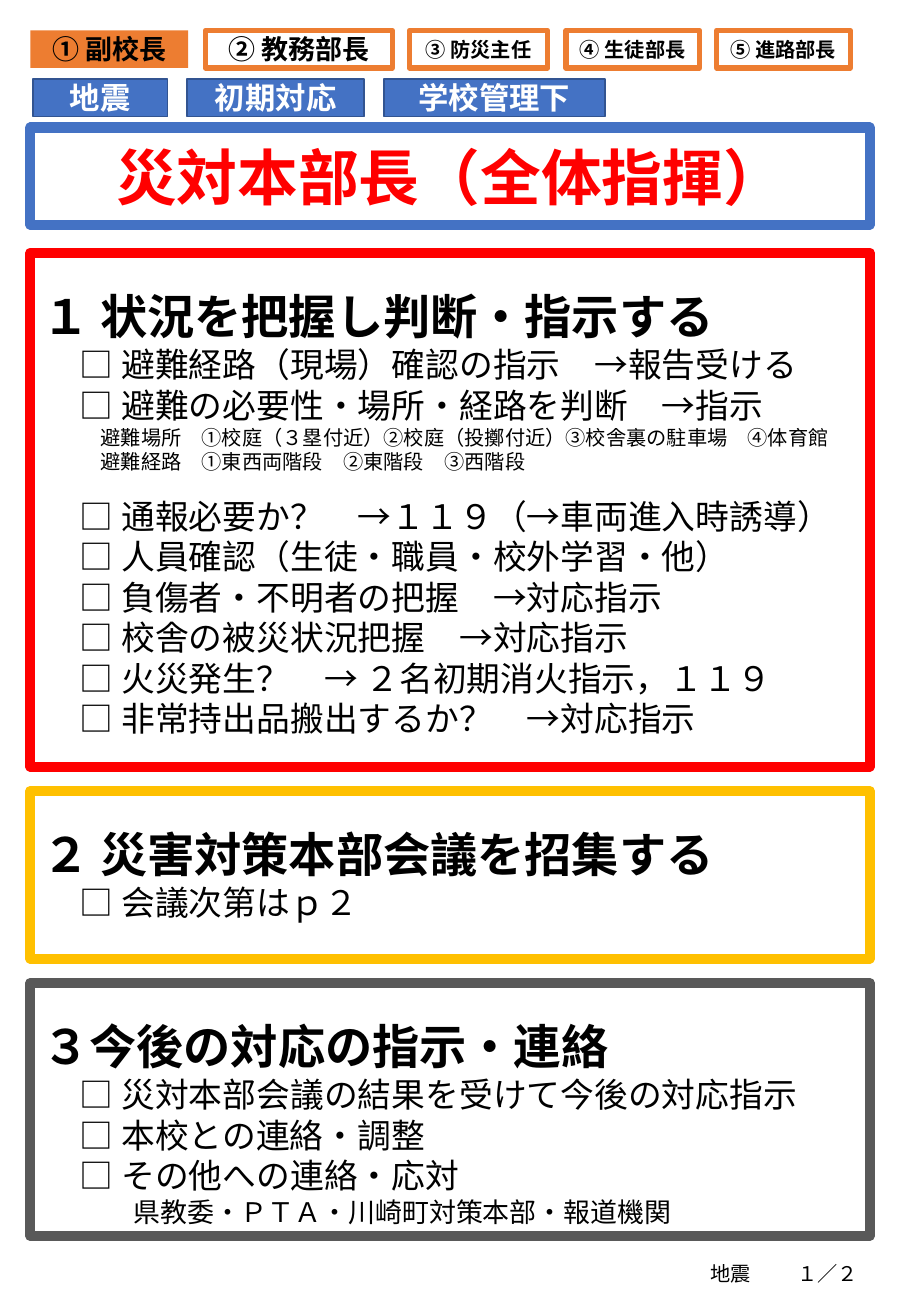
from pptx import Presentation
from pptx.dml.color import RGBColor
from pptx.enum.shapes import MSO_SHAPE
from pptx.enum.text import MSO_ANCHOR, PP_ALIGN
from pptx.util import Inches, Pt
from lxml import etree

RECTANGLE = MSO_SHAPE.RECTANGLE
TOP, MIDDLE = MSO_ANCHOR.TOP, MSO_ANCHOR.MIDDLE
LEFT, CENTER, RIGHT = PP_ALIGN.LEFT, PP_ALIGN.CENTER, PP_ALIGN.RIGHT

BLACK = RGBColor(0x00, 0x00, 0x00)
WHITE = RGBColor(0xFF, 0xFF, 0xFF)
RED = RGBColor(0xFF, 0x00, 0x00)
ORANGE = RGBColor(0xED, 0x7D, 0x31)
BLUE = RGBColor(0x44, 0x72, 0xC4)
DARK_BLUE = RGBColor(0x32, 0x54, 0x91)
YELLOW = RGBColor(0xFF, 0xC0, 0x00)
GRAY = RGBColor(0x59, 0x59, 0x59)

JAPANESE_FONT = "Noto Sans CJK JP"
LATIN_FONT = "Calibri"
DRAWING = "{http://schemas.openxmlformats.org/drawingml/2006/main}"

presentation = Presentation()
presentation.slide_width = Inches(7.5)
presentation.slide_height = Inches(10.83)
slide = presentation.slides.add_slide(presentation.slide_layouts[6])

# Shared grid, in inches
MARGIN, FRAME_WIDTH = 0.25, 6.91
ROLE_TOP, TAG_TOP, LABEL_HEIGHT = 0.25, 0.65, 0.31


def add_box(left, top, width, height, fill, line, line_width, anchor=MIDDLE):
    shape = slide.shapes.add_shape(
        RECTANGLE, Inches(left), Inches(top), Inches(width), Inches(height))
    shape.shadow.inherit = False
    shape.fill.solid()
    shape.fill.fore_color.rgb = fill
    if line is None:
        shape.line.fill.background()
    else:
        shape.line.color.rgb = line
        shape.line.width = Pt(line_width)
    shape.text_frame.vertical_anchor = anchor
    return shape


def write(paragraph, text, size, color=BLACK, bold=False, align=LEFT, font=JAPANESE_FONT):
    paragraph.text = text
    paragraph.alignment = align
    run = paragraph.runs[0]
    run.font.name = font
    run.font.size = Pt(size)
    run.font.bold = bold
    run.font.color.rgb = color
    east_asian = etree.SubElement(run.font._element, DRAWING + "ea")
    east_asian.set("typeface", JAPANESE_FONT)


# Role labels and situation tags
labels = [
    (0.25, ROLE_TOP, 1.30, "① 副校長", 16, ORANGE, None, 0, BLACK),
    (1.69, ROLE_TOP, 1.54, "② 教務部長", 16, WHITE, ORANGE, 3, BLACK),
    (3.37, ROLE_TOP, 1.14, "③ 防災主任", 12, WHITE, ORANGE, 3, BLACK),
    (4.66, ROLE_TOP, 1.10, "④ 生徒部長", 12, WHITE, ORANGE, 3, BLACK),
    (5.90, ROLE_TOP, 1.10, "⑤ 進路部長", 12, WHITE, ORANGE, 3, BLACK),
    (0.27, TAG_TOP, 1.11, "地震", 18, BLUE, DARK_BLUE, 1, WHITE),
    (1.54, TAG_TOP, 1.46, "初期対応", 18, BLUE, DARK_BLUE, 1, WHITE),
    (3.16, TAG_TOP, 1.82, "学校管理下", 18, BLUE, DARK_BLUE, 1, WHITE),
]
for left, top, width, text, size, fill, line, line_width, color in labels:
    label = add_box(left, top, width, LABEL_HEIGHT, fill, line, line_width)
    label.text_frame.word_wrap = False
    write(label.text_frame.paragraphs[0], text, size, color, True, CENTER)

# Title
title = add_box(MARGIN, 1.05, FRAME_WIDTH, 0.8, WHITE, BLUE, 6)
write(title.text_frame.paragraphs[0], "災対本部長（全体指揮）", 36, RED, True, CENTER)

# Checklist sections: text, size, indent, space before
ITEM, PLACE, CONTACT = (20, 0.31, 0), (12, 0.48, 0), (16, 0.75, 0)
ITEM_AFTER_GAP = (20, 0.31, 13)
sections = [
    (2.08, 4.23, RED, "１ 状況を把握し判断・指示する", [
        ("□ 避難経路（現場）確認の指示　→報告受ける", ITEM),
        ("□ 避難の必要性・場所・経路を判断　→指示", ITEM),
        ("避難場所　①校庭（３塁付近）②校庭（投擲付近）③校舎裏の駐車場　④体育館", PLACE),
        ("避難経路　①東西両階段　②東階段　③西階段", PLACE),
        ("□ 通報必要か？　→１１９（→車両進入時誘導）", ITEM_AFTER_GAP),
        ("□ 人員確認（生徒・職員・校外学習・他）", ITEM),
        ("□ 負傷者・不明者の把握　→対応指示", ITEM),
        ("□ 校舎の被災状況把握　→対応指示", ITEM),
        ("□ 火災発生？　→ ２名初期消火指示，１１９", ITEM),
        ("□ 非常持出品搬出するか？　→対応指示", ITEM),
    ]),
    (6.51, 1.38, YELLOW, "２ 災害対策本部会議を招集する", [
        ("□ 会議次第はｐ２", ITEM),
    ]),
    (8.09, 2.08, GRAY, "３今後の対応の指示・連絡", [
        ("□ 災対本部会議の結果を受けて今後の対応指示", ITEM),
        ("□ 本校との連絡・調整", ITEM),
        ("□ その他への連絡・応対", ITEM),
        ("県教委・ＰＴＡ・川崎町対策本部・報道機関", CONTACT),
    ]),
]
for top, height, color, heading, items in sections:
    section = add_box(MARGIN, top, FRAME_WIDTH, height, WHITE, color, 6, TOP)
    frame = section.text_frame
    write(frame.paragraphs[0], heading, 28, bold=True)
    frame.paragraphs[0].line_spacing = 1.5
    for text, (size, indent, space_before) in items:
        paragraph = frame.add_paragraph()
        write(paragraph, text, size)
        paragraph.space_before = Pt(space_before)
        paragraph._p.get_or_add_pPr().set("marL", str(Inches(indent)))

# Footer
for left, text, align in [(5.75, "地震", LEFT), (6.45, "１／２", RIGHT)]:
    footer = slide.shapes.add_textbox(
        Inches(left), Inches(10.33), Inches(0.71), Inches(LABEL_HEIGHT))
    footer.text_frame.word_wrap = True
    write(footer.text_frame.paragraphs[0], text, 12, align=align, font=LATIN_FONT)

presentation.save("out.pptx")
